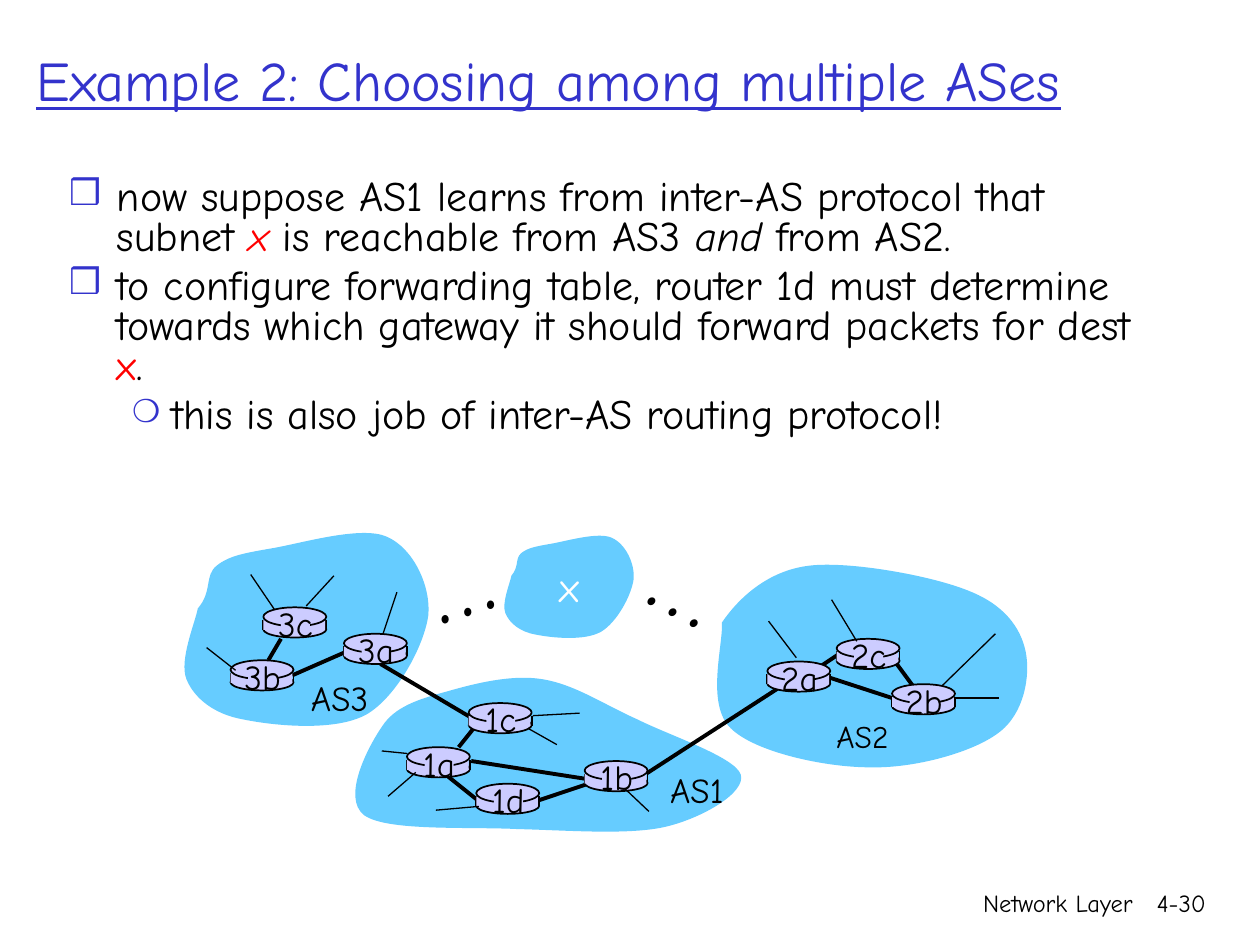
from lxml import etree
from pptx import Presentation
from pptx.dml.color import RGBColor
from pptx.enum import shapes, text
from pptx.oxml.ns import qn
from pptx.util import Inches, Pt

THEME = {
    "font": "Comic Neue", "ink": "000000", "accent": "3333CC", "alert": "FF0000",
    "cloud": "66CCFF", "router": "CCCCFF", "light": "FFFFFF",
    "title": 32, "body": 24, "label": 20, "small": 18, "footer": 14, "dots": 54,
    "link": 2.25, "outline": 1, "spur": 0.75,
}

TITLE = "Example 2: Choosing among multiple ASes"
BULLETS = [
    ("❒", 85, 0.38, 0.38, [
        ("now suppose AS1 learns from inter-AS protocol that subnet ", {}),
        ("x", {"color": "alert", "italic": True}),
        (" is reachable from AS3 ", {}), ("and", {"italic": True}), (" from AS2.", {})]),
    ("❒", 85, 0.38, 0.38, [
        ("to configure forwarding table, router 1d must determine towards which "
         "gateway it should forward packets for dest ", {}),
        ("x", {"color": "alert"}), (".", {})]),
    ("❍", 75, 0.81, 0.31, [("this is also job of inter-AS routing protocol!", {})]),
]
FOOTER = [("Network Layer", 5.92, 3.17), ("4-30", 8.93, 0.74)]

AS2_CLOUD = [
    (5.73, 4.94),
    (5.86, 4.75), (6.09, 4.53), (6.42, 4.49), (6.74, 4.45), (7.4, 4.57), (7.69, 4.69),
    (7.97, 4.8), (8.1, 4.98), (8.14, 5.17), (8.18, 5.36), (8.13, 5.67), (7.92, 5.82),
    (7.72, 5.97), (7.26, 6.1), (6.9, 6.09), (6.55, 6.09), (5.99, 5.97), (5.8, 5.78),
    (5.6, 5.59), (5.74, 5.12), (5.73, 4.94),
]
AS3_CLOUD = [
    (1.57, 4.83),
    (1.69, 4.69), (1.62, 4.57), (1.72, 4.49), (1.82, 4.41), (1.94, 4.39), (2.17, 4.35),
    (2.4, 4.31), (2.87, 4.17), (3.07, 4.26), (3.28, 4.35), (3.42, 4.65), (3.4, 4.88),
    (3.37, 5.12), (3.15, 5.53), (2.91, 5.67), (2.66, 5.81), (2.17, 5.76), (1.93, 5.71),
    (1.7, 5.67), (1.54, 5.54), (1.48, 5.39), (1.42, 5.24), (1.55, 4.94), (1.57, 4.83),
]
AS1_CLOUD = [
    (3.03, 5.77),
    (3.13, 5.61), (3.32, 5.55), (3.54, 5.49), (3.75, 5.43), (4.05, 5.35), (4.3, 5.39),
    (4.56, 5.43), (4.79, 5.59), (5.06, 5.71), (5.32, 5.84), (5.84, 6.01), (5.88, 6.15),
    (5.92, 6.29), (5.58, 6.49), (5.29, 6.56), (5, 6.63), (4.51, 6.59), (4.11, 6.58),
    (3.71, 6.56), (3.07, 6.6), (2.89, 6.47), (2.71, 6.33), (2.92, 5.93), (3.03, 5.77),
]
AS3_ORIGIN, SUBNET_ORIGIN, SUBNET_SCALE = (1.42, 4.17), (3.98, 4.22), 0.53

ROUTERS = {
    "3b": (1.83, 5.24), "1d": (3.78, 6.22), "3a": (2.73, 5.03),
    "1c": (3.72, 5.58), "2a": (6.09, 5.25), "1a": (3.23, 5.93),
    "2c": (6.64, 5.07), "2b": (7.08, 5.43), "1b": (4.64, 6.04),
    "3c": (2.09, 4.82),
}
LINKS = [
    (6.59, 5.38, 7.08, 5.54), (7.11, 5.26, 7.25, 5.45), (6.48, 5.31, 6.66, 5.19),
    (4.28, 6.35, 4.7, 6.21), (3.54, 6.15, 3.79, 6.35), (3.74, 6.04, 4.64, 6.18),
    (3.64, 5.93, 3.76, 5.78), (2.32, 5.36, 2.73, 5.18), (3.02, 5.27, 3.73, 5.69),
    (5.13, 6.14, 6.18, 5.46), (2.23, 5.07, 2.13, 5.24),
]
SPURS = [
    (1.64, 5.14, 1.87, 5.32), (2.65, 4.57, 2.43, 4.81), (1.99, 4.56, 2.18, 4.84),
    (3.15, 4.7, 3.04, 5.03), (7.57, 5.54, 7.93, 5.54), (7.48, 5.44, 7.9, 5.03),
    (6.8, 5.09, 6.6, 4.76), (6.32, 5.22, 6.1, 4.93), (3.3, 6.13, 3.08, 6.32),
    (3.23, 5.98, 3.03, 5.96), (3.8, 6.4, 3.46, 6.43), (4.23, 5.68, 4.6, 5.66),
    (4.96, 6.26, 5.15, 6.44), (4.19, 5.78, 4.42, 5.91),
]
LABELS = [
    ("AS3", (2.37, 5.32, 0.77, 0.43), {"size": "label"}),
    ("AS1", (5.22, 6.05, 0.72, 0.43), {"size": "label"}),
    ("AS2", (6.54, 5.64, 0.71, 0.4), {"size": "small"}),
    ("x", (4.34, 4.4, 0.4, 0.5), {"color": "light"}),
    ("…", (3.29, 4.1, 0.71, 1), {"size": "dots", "rotation": 342.3}),
    ("…", (5.12, 4.13, 0.71, 1), {"size": "dots", "rotation": 27.4}),
]


def rgb(name):
    return RGBColor.from_string(THEME[name])


def add_run(p, words, size="body", color="ink", italic=False, underline=False):
    r = p.add_run()
    r.text = words
    r.font.name, r.font.size = THEME["font"], Pt(THEME[size])
    r.font.color.rgb = rgb(color)
    r.font.italic, r.font.underline = italic, underline


def add_text(s, words, box, align="LEFT", anchor="TOP", wrap=False, rotation=0, **style):
    sp = s.shapes.add_textbox(*map(Inches, box))
    sp.rotation = rotation
    tf = sp.text_frame
    tf.word_wrap = wrap
    tf.auto_size = text.MSO_AUTO_SIZE.NONE if wrap else text.MSO_AUTO_SIZE.SHAPE_TO_FIT_TEXT
    tf.vertical_anchor = text.MSO_ANCHOR[anchor]
    tf.paragraphs[0].alignment = text.PP_ALIGN[align]
    if words:
        add_run(tf.paragraphs[0], words, **style)
    return tf


def add_bullets(s):
    tf = add_text(s, "", (0.45, 1.37, 8.74, 3.01), wrap=True)
    for i, (mark, percent, margin, hang, runs) in enumerate(BULLETS):
        p = tf.add_paragraph() if i else tf.paragraphs[0]
        p.line_spacing = 0.8
        pPr = p._p.get_or_add_pPr()
        pPr.set("marL", str(Inches(margin)))
        pPr.set("indent", str(-Inches(hang)))
        before = etree.SubElement(pPr, qn("a:spcBef"))
        etree.SubElement(before, qn("a:spcPct"), val="20000")
        color = etree.SubElement(pPr, qn("a:buClr"))
        etree.SubElement(color, qn("a:srgbClr"), val=THEME["accent"])
        etree.SubElement(pPr, qn("a:buSzPct"), val=str(percent * 1000))
        etree.SubElement(pPr, qn("a:buFont"), typeface=THEME["font"])
        etree.SubElement(pPr, qn("a:buChar"), char=mark)
        for words, style in runs:
            add_run(p, words, **style)


def paint(sp, fill, outlined=False):
    sp.shadow.inherit = False
    sp.fill.solid()
    sp.fill.fore_color.rgb = rgb(fill)
    if outlined:
        sp.line.color.rgb = rgb("ink")
        sp.line.width = Pt(THEME["outline"])
    else:
        sp.line.fill.background()


def add_line(s, ends, weight):
    c = s.shapes.add_connector(shapes.MSO_CONNECTOR.STRAIGHT, *map(Inches, ends))
    c.line.color.rgb = rgb("ink")
    c.line.width = Pt(THEME[weight])
    etree.SubElement(c._element.spPr, qn("a:effectLst"))


def add_cloud(s, outline):
    points = [(Inches(x), Inches(y)) for x, y in outline]
    fb = s.shapes.build_freeform(*points[0])
    fb.add_line_segments(points[1:], close=True)
    sp = fb.convert_to_shape()
    segments = list(sp._element.iter(qn("a:lnTo")))
    for first, second, end in zip(segments[::3], segments[1::3], segments[2::3]):
        curve = etree.Element(qn("a:cubicBezTo"))
        first.addprevious(curve)
        for segment in (first, second, end):
            curve.append(segment[0])
            segment.getparent().remove(segment)
    paint(sp, "cloud")


def add_router(s, name, x, y):
    def part(kind, dx, dy, w, h, outlined=False):
        sp = s.shapes.add_shape(shapes.MSO_SHAPE[kind], *map(Inches, (x + dx, y + dy, w, h)))
        paint(sp, "router", outlined)

    part("OVAL", 0, 0.11, 0.5, 0.13, True)
    for side in (x, x + 0.5):
        add_line(s, (side, y + 0.1, side, y + 0.18), "outline")
    part("RECTANGLE", 0, 0.1, 0.49, 0.08)
    part("OVAL", 0, 0, 0.5, 0.15, True)
    part("RECTANGLE", 0.14, 0.02, 0.23, 0.2)
    add_text(s, name, (x, y - 0.09, 0.51, 0.43), align="CENTER", size="label")


def main():
    prs = Presentation()
    prs.slide_width, prs.slide_height = Inches(10), Inches(7.5)
    s = prs.slides.add_slide(prs.slide_layouts[6])
    for words, left, width in FOOTER:
        add_text(s, words, (left, 7, width, 0.5), align="RIGHT", wrap=True, size="footer")
    add_text(s, TITLE, (0.19, 0, 9.59, 1.25), anchor="MIDDLE", wrap=True,
             size="title", color="accent", underline=True)
    add_bullets(s)
    subnet = [tuple(to + SUBNET_SCALE * (v - start)
                    for v, start, to in zip(point, AS3_ORIGIN, SUBNET_ORIGIN))
              for point in AS3_CLOUD]
    for outline in (AS2_CLOUD, AS3_CLOUD, AS1_CLOUD, subnet):
        add_cloud(s, outline)
    for ends in LINKS:
        add_line(s, ends, "link")
    for name, (x, y) in ROUTERS.items():
        add_router(s, name, x, y)
    for ends in SPURS:
        add_line(s, ends, "spur")
    for words, box, style in LABELS:
        add_text(s, words, box, **style)
    prs.save("out.pptx")


if __name__ == "__main__":
    main()
